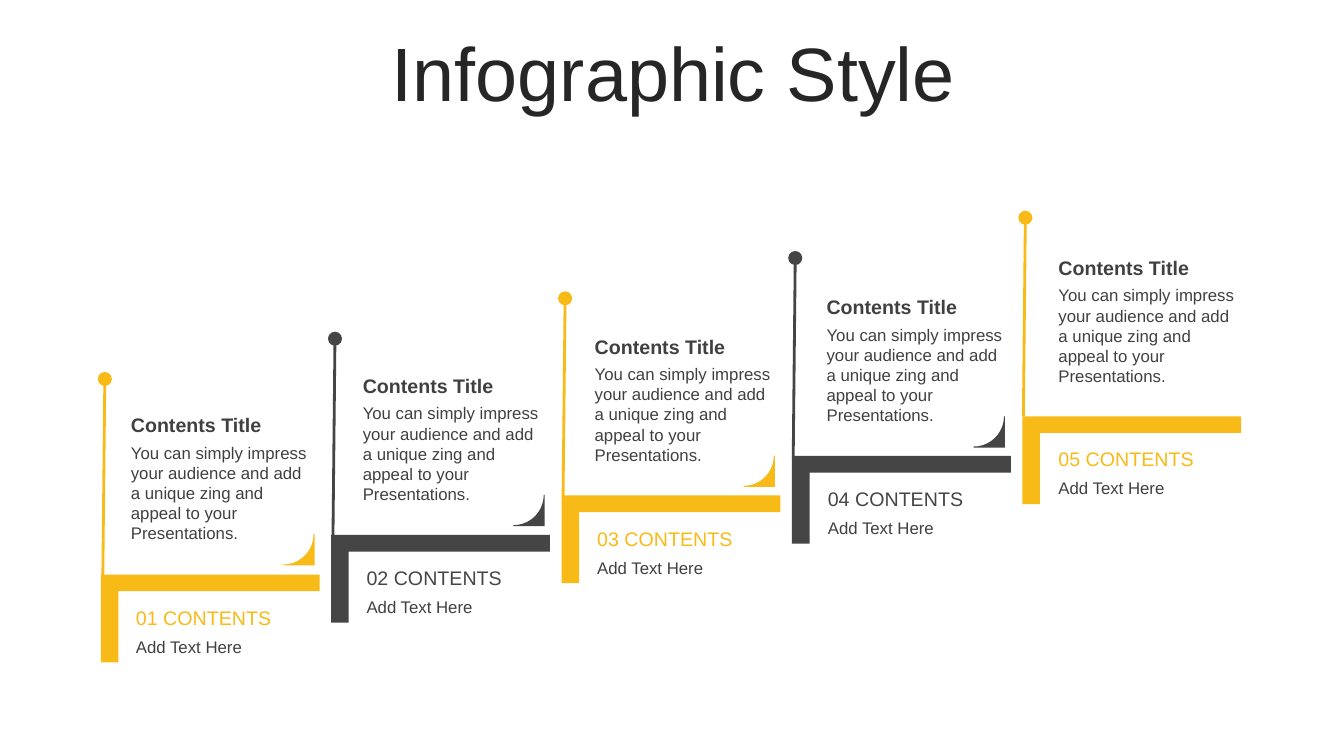
import dataclasses
import math

import lxml.etree
import pptx
import pptx.dml.color
import pptx.enum.shapes
import pptx.enum.text
import pptx.oxml.ns
import pptx.util

Inches = pptx.util.Inches
Pt = pptx.util.Pt
ANCHOR = pptx.enum.text.MSO_ANCHOR
HUES = {"gold": "F8BA16", "dark": "454545", "text": "404040", "title": "262626"}
COUNT = 5
BLURB = ("You can simply impress your audience and add a unique zing "
         "and appeal to your Presentations.")


@dataclasses.dataclass
class Track:
    """Place of a part on the first step, and its way to the last step."""
    left: float
    top: float
    run: float
    rise: float

    def at(self, step: int) -> tuple[float, float]:
        part = step / (COUNT - 1)
        return self.left + self.run * part, self.top - self.rise * part


@dataclasses.dataclass
class Label:
    track: Track
    width: float
    height: float
    text: str
    size: int
    hue: str = "text"
    bold: bool = False
    anchor: ANCHOR = ANCHOR.TOP


CORNER = Track(1, 5.7, 9.14, 1.57)
WING = Track(2.81, 5.3, 9.13, 1.56)
POLE = Track(1.02, 5.73, 9.13, 1.6)
HEAD = Track(1.25, 5.96, 9.15, 1.58)
SUB = Track(1.25, 6.27, 9.15, 1.58)
BODY = Track(1.2, 4.34, 9.2, 1.56)
TOPIC = Track(1.2, 4.05, 9.2, 1.56)


def rgb(hue: str) -> pptx.dml.color.RGBColor:
    return pptx.dml.color.RGBColor.from_string(HUES[hue])


def paint(shape, hue: str) -> None:
    shape.shadow.inherit = False
    shape.fill.solid()
    shape.fill.fore_color.rgb = rgb(hue)
    shape.line.fill.background()


def style(para, size: int, hue: str, bold: bool = False) -> None:
    para.font.name = "Arial"
    para.font.size = Pt(size)
    para.font.bold = bold
    para.font.color.rgb = rgb(hue)


def add_corner(slide, step: int, hue: str) -> None:
    left, top = CORNER.at(step)
    shape = slide.shapes.add_shape(
        pptx.enum.shapes.MSO_SHAPE.CORNER,
        Inches(left), Inches(top), Inches(2.17), Inches(0.87))
    shape.adjustments[0] = 0.19
    shape.adjustments[1] = 0.2
    shape.rotation = 180
    shape._element.spPr.find(pptx.oxml.ns.qn("a:xfrm")).set("flipH", "1")
    paint(shape, hue)


def add_wing(slide, step: int, hue: str) -> None:
    left, top = WING.at(step)
    side, curve, parts = 0.31, 0.3, 24
    turns = [math.pi / 2 * n / parts for n in range(parts + 1)]
    arc = [(curve * math.sin(t), curve * math.cos(t)) for t in turns]
    edge = [(Inches(left + x), Inches(top + y))
            for x, y in [(side, 0), (side, side), (0, side), *arc]]
    build = slide.shapes.build_freeform(*edge[0])
    build.add_line_segments(edge[1:], close=True)
    paint(build.convert_to_shape(), hue)


def add_pole(slide, step: int, hue: str) -> None:
    left, top = POLE.at(step)
    pole = slide.shapes.add_connector(
        pptx.enum.shapes.MSO_CONNECTOR.STRAIGHT,
        Inches(left), Inches(top), Inches(left + 0.02), Inches(top - 1.97))
    pole.line.width = Pt(2)
    pole.line.color.rgb = rgb(hue)
    # Round end, no shadow
    qn = pptx.oxml.ns.qn
    line = pole._element.spPr.find(qn("a:ln"))
    lxml.etree.SubElement(line, qn("a:tailEnd"),
                          type="oval", w="lg", len="lg")
    lxml.etree.SubElement(pole._element.spPr, qn("a:effectLst"))


def add_label(slide, step: int, label: Label) -> None:
    left, top = label.track.at(step)
    box = slide.shapes.add_textbox(Inches(left), Inches(top),
                                   Inches(label.width), Inches(label.height))
    frame = box.text_frame
    frame.word_wrap = True
    frame.auto_size = pptx.enum.text.MSO_AUTO_SIZE.SHAPE_TO_FIT_TEXT
    frame.vertical_anchor = label.anchor
    frame.text = label.text
    style(frame.paragraphs[0], label.size, label.hue, label.bold)


def add_title(slide) -> None:
    title = slide.shapes.title
    title.left, title.top = Inches(0.35), Inches(0.37)
    title.width, title.height = Inches(12.66), Inches(0.79)
    frame = title.text_frame
    frame.text = "Infographic Style"
    frame.auto_size = pptx.enum.text.MSO_AUTO_SIZE.NONE
    frame.vertical_anchor = ANCHOR.MIDDLE
    para = frame.paragraphs[0]
    para.alignment = pptx.enum.text.PP_ALIGN.CENTER
    para.line_spacing = 0.9
    para.space_before = Pt(10)
    style(para, 54, "title")


def main() -> None:
    deck = pptx.Presentation()
    deck.slide_width, deck.slide_height = Inches(13.33), Inches(7.5)
    slide = deck.slides.add_slide(deck.slide_layouts[5])
    add_title(slide)

    # Rising steps
    for step in range(COUNT):
        hue = "dark" if step % 2 else "gold"
        add_corner(slide, step, hue)
        if step < COUNT - 1:
            add_wing(slide, step, hue)
        add_pole(slide, step, hue)
        labels = [
            Label(HEAD, 1.86, 0.34, f"{step + 1:02} CONTENTS", 14, hue,
                  anchor=ANCHOR.MIDDLE),
            Label(SUB, 1.86, 0.3, "Add Text Here", 12),
            Label(BODY, 2, 1.11, BLURB, 12),
            Label(TOPIC, 2, 0.34, "Contents Title", 14, bold=True),
        ]
        for label in labels:
            add_label(slide, step, label)

    deck.save("out.pptx")


if __name__ == "__main__":
    main()
